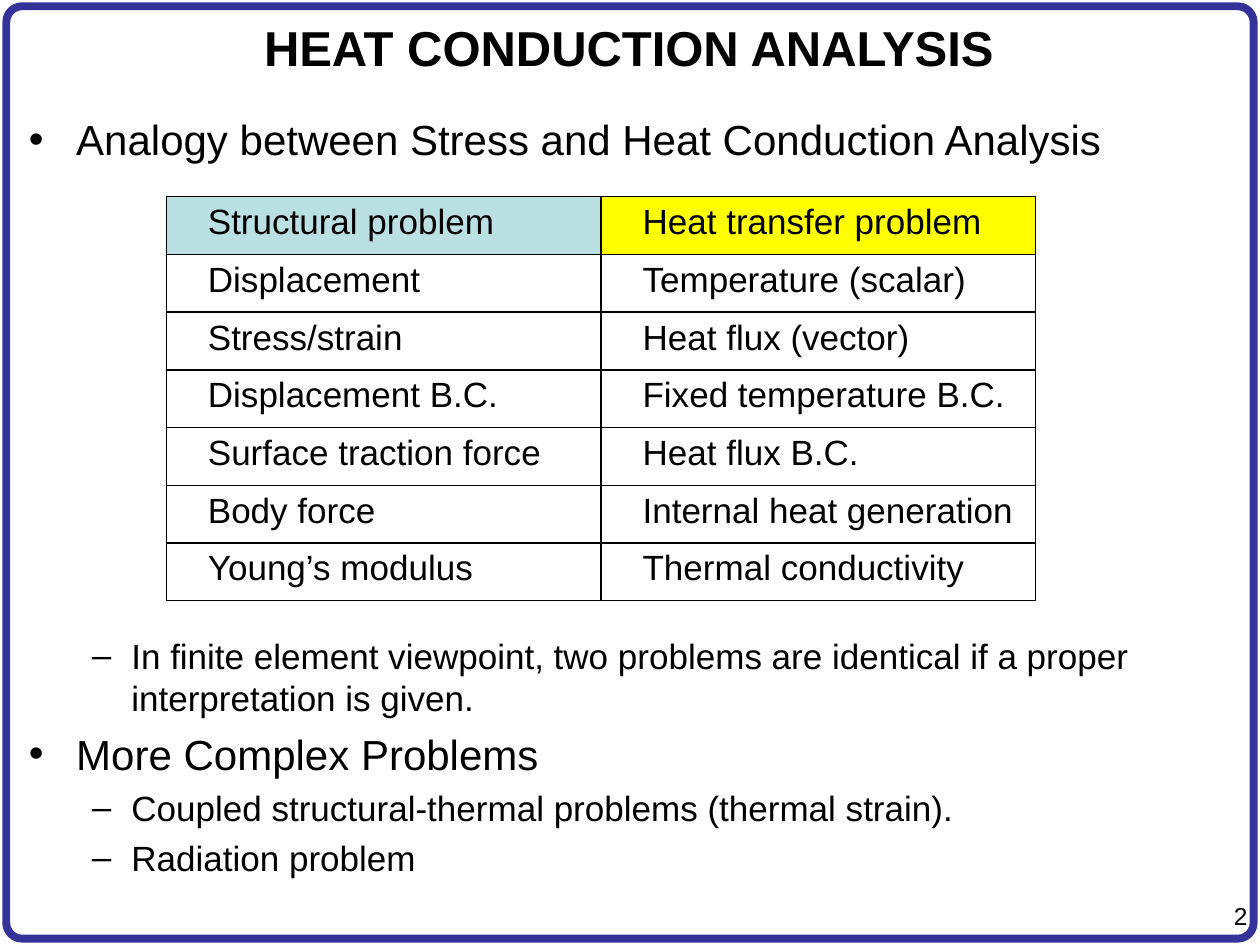
from dataclasses import dataclass

from lxml import etree
from pptx import Presentation
from pptx.dml.color import RGBColor
from pptx.enum.shapes import MSO_SHAPE
from pptx.enum.text import MSO_ANCHOR, MSO_AUTO_SIZE, PP_ALIGN
from pptx.oxml.ns import qn
from pptx.util import Inches, Pt

ROUNDED = MSO_SHAPE.ROUNDED_RECTANGLE
TOP, MIDDLE = MSO_ANCHOR.TOP, MSO_ANCHOR.MIDDLE
LEFT, CENTER, RIGHT = PP_ALIGN.LEFT, PP_ALIGN.CENTER, PP_ALIGN.RIGHT
FIXED = MSO_AUTO_SIZE.NONE
COLUMNS, ROWS = 100, 75


@dataclass(frozen=True)
class Theme:
    font: str = "Arial"
    ink: str = "000000"
    frame: str = "333399"
    headers: tuple = ("BBE0E3", "FFFF00")
    title_size: int = 28
    list_sizes: tuple = (24, 20)
    list_spaces: tuple = (5.5, 4.6)
    table_size: int = 20
    number_size: int = 14
    frame_width: float = 4.5
    border_width: float = 1


def write(paragraph, text, theme, size, bold=False, align=LEFT, before=0, level=0):
    paragraph.text = text
    paragraph.level = level
    paragraph.alignment = align
    paragraph.space_before = Pt(before)
    for run in paragraph.runs:
        run.font.name = theme.font
        run.font.size = Pt(size)
        run.font.bold = bold
        run.font.color.rgb = RGBColor.from_string(theme.ink)


class SlideBuilder:
    def __init__(self, presentation, theme):
        self.theme = theme
        self.width = presentation.slide_width
        self.height = presentation.slide_height
        self.slide = presentation.slides.add_slide(presentation.slide_layouts[1])

    def area(self, left, top, width, height):
        column, row = self.width / COLUMNS, self.height / ROWS
        return [round(length) for length in
                (left * column, top * row, width * column, height * row)]

    def place(self, shape, area):
        shape.left, shape.top, shape.width, shape.height = self.area(*area)
        text_frame = shape.text_frame
        text_frame.word_wrap = True
        text_frame.auto_size = FIXED
        return text_frame

    def frame(self, area, corner):
        shape = self.slide.shapes.add_shape(ROUNDED, *self.area(*area))
        shape.adjustments[0] = corner
        shape.shadow.inherit = False
        shape.fill.background()
        shape.line.color.rgb = RGBColor.from_string(self.theme.frame)
        shape.line.width = Pt(self.theme.frame_width)
        self.slide.shapes.element.insert(2, shape.element)

    def title(self, text, area):
        text_frame = self.place(self.slide.shapes.title, area)
        text_frame.vertical_anchor = MIDDLE
        write(text_frame.paragraphs[0], text, self.theme, self.theme.title_size,
              bold=True, align=CENTER)

    def bullets(self, items, area, gaps):
        text_frame = self.place(self.slide.placeholders[1], area)
        text_frame.vertical_anchor = TOP
        text_frame.margin_top = Inches(0.09)
        for index, (level, text) in enumerate(items):
            paragraph = text_frame.add_paragraph() if index else text_frame.paragraphs[0]
            write(paragraph, text, self.theme, self.theme.list_sizes[level], level=level,
                  before=gaps.get(index, self.theme.list_spaces[level]))

    def number(self, text, area):
        text_box = self.slide.shapes.add_textbox(*self.area(*area))
        text_frame = self.place(text_box, area)
        write(text_frame.paragraphs[0], text, self.theme, self.theme.number_size,
              align=RIGHT)

    def borders(self, cell):
        properties = cell._tc.get_or_add_tcPr()
        for side in ("lnL", "lnR", "lnT", "lnB"):
            line = etree.SubElement(properties, qn(f"a:{side}"),
                                    w=str(Pt(self.theme.border_width)))
            fill = etree.SubElement(line, qn("a:solidFill"))
            etree.SubElement(fill, qn("a:srgbClr"), val=self.theme.ink)

    def table(self, rows, area):
        left, top, width, height = self.area(*area)
        table = self.slide.shapes.add_table(
            len(rows), len(rows[0]), left, top, width, height).table
        table.first_row = table.horz_banding = False
        for row_index, row in enumerate(rows):
            for column_index, text in enumerate(row):
                cell = table.cell(row_index, column_index)
                cell.margin_left = Inches(0.33)
                self.borders(cell)
                if row_index:
                    cell.fill.background()
                else:
                    cell.fill.solid()
                    color = self.theme.headers[column_index]
                    cell.fill.fore_color.rgb = RGBColor.from_string(color)
                write(cell.text_frame.paragraphs[0], text, self.theme,
                      self.theme.table_size)


def main():
    presentation = Presentation()
    presentation.slide_width, presentation.slide_height = Inches(10), Inches(7.5)
    builder = SlideBuilder(presentation, Theme())
    builder.frame((0.5, 0.5, 99, 74), corner=0.017)
    builder.number("2", (94.6, 71, 5.4, 3.3))
    builder.title("HEAT CONDUCTION ANALYSIS", (0.4, 0.5, 99, 6.5))
    builder.bullets([
        (0, "Analogy between Stress and Heat Conduction Analysis"),
        (1, "In finite element viewpoint, two problems are identical if a proper "
            "interpretation is given."),
        (0, "More Complex Problems"),
        (1, "Coupled structural-thermal problems (thermal strain)."),
        (1, "Radiation problem"),
    ], (1.3, 8.1, 97.4, 65.7), gaps={0: 0, 1: 269})
    builder.table([
        ("Structural problem", "Heat transfer problem"),
        ("Displacement", "Temperature (scalar)"),
        ("Stress/strain", "Heat flux (vector)"),
        ("Displacement B.C.", "Fixed temperature B.C."),
        ("Surface traction force", "Heat flux B.C."),
        ("Body force", "Internal heat generation"),
        ("Young’s modulus", "Thermal conductivity"),
    ], (13.2, 15.6, 69, 32.1))
    presentation.save("out.pptx")


if __name__ == "__main__":
    main()
